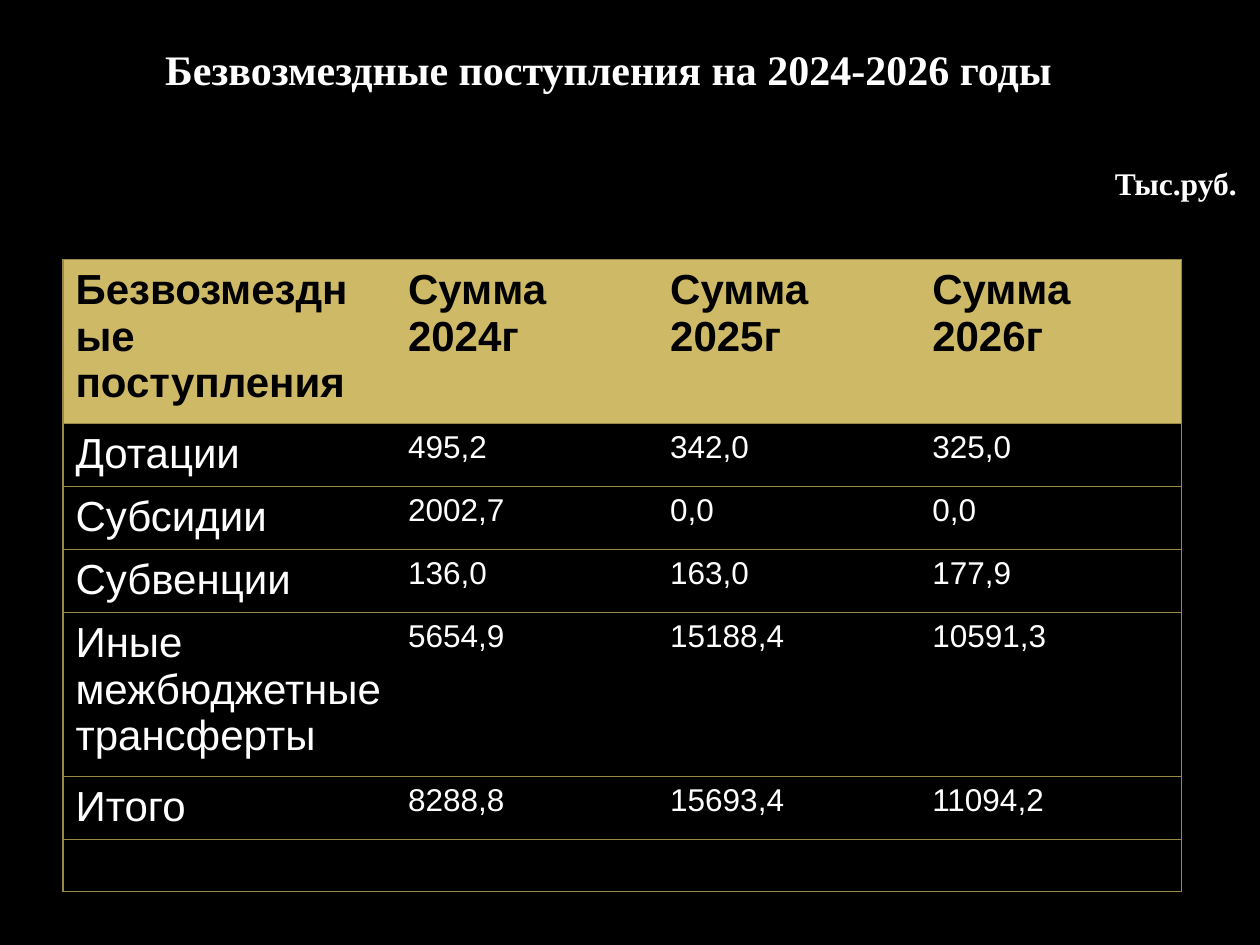
from pptx import Presentation
from pptx.dml.color import RGBColor
from pptx.enum.text import MSO_ANCHOR as Anchor, PP_ALIGN as Align
from pptx.oxml.ns import qn
from pptx.util import Pt
from lxml import etree

BLACK, WHITE, SAND, GOLD = "000000", "FFFFFF", "CEB966", "998946"
SERIF, SANS = "Times New Roman", "Arial"

COL_WIDTHS = [190, 149.8, 149.8, 149.8]
ROW_HEIGHT = 29.5
ROWS = [
    ["Безвозмездные поступления", "Сумма\n2024г", "Сумма\n2025г", "Сумма\n2026г"],
    ["Дотации", "495,2", "342,0", "325,0"],
    ["Субсидии", "2002,7", "0,0", "0,0"],
    ["Субвенции", "136,0", "163,0", "177,9"],
    ["Иные межбюджетные\nтрансферты", "5654,9", "15188,4", "10591,3"],
    ["Итого", "8288,8", "15693,4", "11094,2"],
    ["", "", "", ""],
]


def rgb(color):
    return RGBColor.from_string(color)


def format_text(tf, size, font, color, bold):
    for p in tf.paragraphs:
        for r in p.runs:
            r.font.size = Pt(size)
            r.font.name = font
            r.font.bold = bold
            r.font.color.rgb = rgb(color)


def add_text(slide, box, text, size, align=Align.LEFT, anchor=Anchor.TOP):
    s = slide.shapes.add_textbox(*map(Pt, box))
    tf = s.text_frame
    tf.word_wrap = True
    tf.vertical_anchor = anchor
    tf.text = text
    tf.paragraphs[0].alignment = align
    format_text(tf, size, SERIF, WHITE, True)


def set_borders(cell, drawn):
    """Draw the named sides in gold and clear the others."""
    tc_pr = cell._tc.get_or_add_tcPr()
    for side in "LRTB":
        ln = etree.SubElement(tc_pr, qn(f"a:ln{side}"), w=str(Pt(0.75)))
        if side in drawn:
            fill = etree.SubElement(ln, qn("a:solidFill"))
            etree.SubElement(fill, qn("a:srgbClr"), val=GOLD)
        else:
            etree.SubElement(ln, qn("a:noFill"))


def add_receipts_table(slide, box):
    s = slide.shapes.add_table(len(ROWS), len(COL_WIDTHS), *map(Pt, box))
    table = s.table
    table.horz_banding = False
    for col, width in zip(table.columns, COL_WIDTHS):
        col.width = Pt(width)
    for row in table.rows:
        row.height = Pt(ROW_HEIGHT)
    s.height = Pt(box[3])

    for i, row in enumerate(ROWS):
        for j, text in enumerate(row):
            cell = table.cell(i, j)
            header, label = i == 0, j == 0
            # Rules between rows, outer frame, no lines between columns
            sides = "TB" + ("L" if label else "")
            sides += "R" if j == len(row) - 1 else ""
            set_borders(cell, sides)
            if header:
                cell.fill.solid()
                cell.fill.fore_color.rgb = rgb(SAND)
            else:
                cell.fill.background()
            if text:
                cell.text_frame.text = text
                format_text(cell.text_frame, 24 if header or label else 18,
                            SANS, BLACK if header else WHITE, header)


def build_slide(prs):
    slide = prs.slides.add_slide(prs.slide_layouts[6])
    slide.background.fill.solid()
    slide.background.fill.fore_color.rgb = rgb(BLACK)

    # Title
    add_text(slide, (0, 0, 695.5, 78), "Безвозмездные поступления на 2024-2026 годы",
             24, Align.CENTER, Anchor.MIDDLE)
    # Receipts by year
    add_receipts_table(slide, (36, 148.5, 639.4, 332))
    # Unit of measure
    add_text(slide, (630, 90, 106.5, 29), "Тыс.руб.", 18)


def main():
    prs = Presentation()
    prs.slide_width, prs.slide_height = Pt(720), Pt(540)
    build_slide(prs)
    prs.save("out.pptx")


if __name__ == "__main__":
    main()
